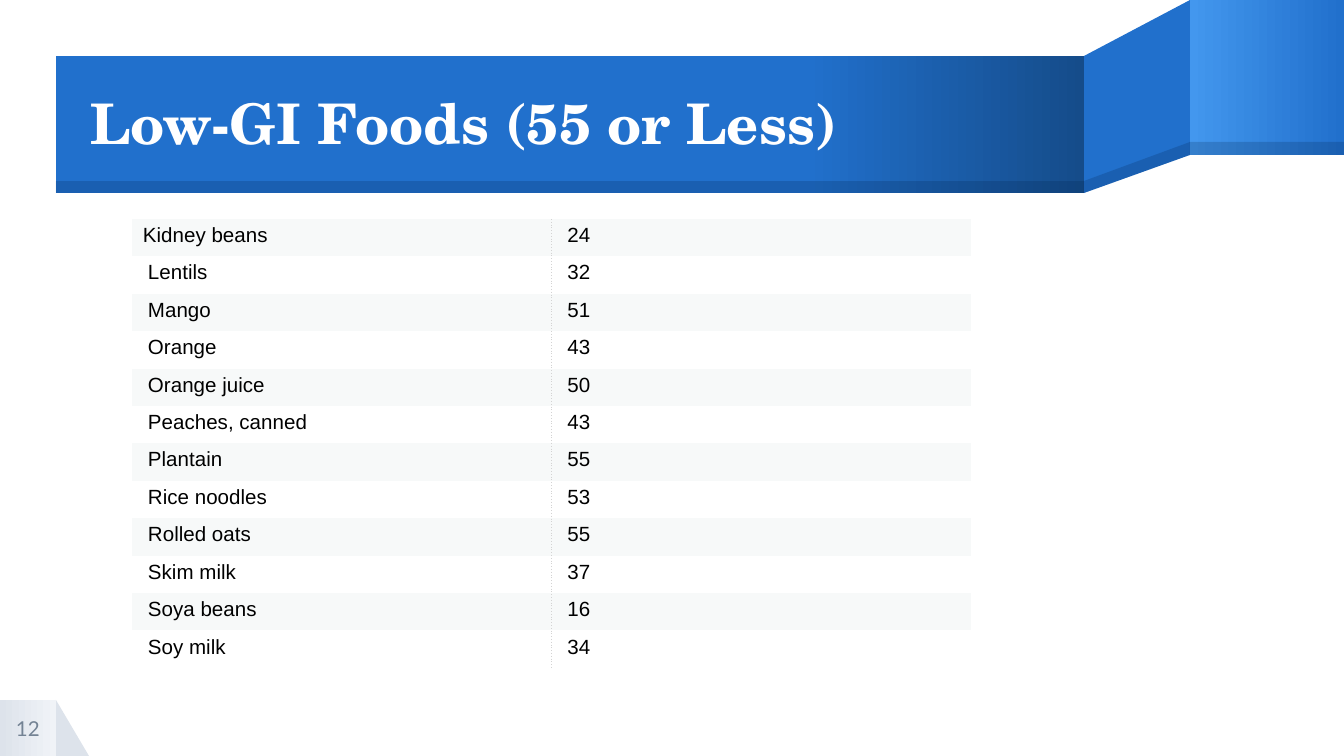
"""Build the slide that lists low-GI foods with their glycaemic index."""
from typing import NamedTuple

from lxml.etree import SubElement
from pptx import Presentation
from pptx.dml.color import RGBColor
from pptx.enum.shapes import MSO_SHAPE
from pptx.enum.text import MSO_ANCHOR, PP_ALIGN
from pptx.oxml.ns import qn
from pptx.util import Pt

EMU_PER_PX = 914400 / 134.4
RECTANGLE = MSO_SHAPE.RECTANGLE
RIGHT_TRIANGLE = MSO_SHAPE.RIGHT_TRIANGLE
MIDDLE = MSO_ANCHOR.MIDDLE
LEFT = PP_ALIGN.LEFT
CENTER = PP_ALIGN.CENTER

WHITE = RGBColor(0xFF, 0xFF, 0xFF)
BLACK = RGBColor(0, 0, 0)
BLUE = RGBColor(0x21, 0x70, 0xCC)
LIGHT_BLUE = RGBColor(0x43, 0x97, 0xEE)
DARK_BLUE = RGBColor(0x15, 0x4C, 0x8A)
SHADE = RGBColor(0x00, 0x1F, 0x46)
GREY = RGBColor(0xDD, 0xE3, 0xEB)
PALE_GREY = RGBColor(0xF0, 0xF3, 0xF7)
NUMBER_GREY = RGBColor(0x74, 0x83, 0x94)
STRIPE = RGBColor(0xF7, 0xF9, 0xF9)
BORDER = RGBColor(0xD3, 0xD3, 0xD3)

NO_TABLE_STYLE = "{2D5ABB26-0587-4C30-8999-92F81FD0307C}"
TEXT_MARGIN, INDENTED_MARGIN, VERTICAL_MARGIN = 11, 16, 5


class Box(NamedTuple):
    left: int
    top: int
    width: int
    height: int


class Stop(NamedTuple):
    percent: int
    color: RGBColor


class Paint(NamedTuple):
    stops: tuple[Stop, ...]
    opacity: int = 100


class Block(NamedTuple):
    box: Box
    paint: Paint
    preset: MSO_SHAPE = RECTANGLE


class Outline(NamedTuple):
    points: tuple[tuple[int, int], ...]
    paint: Paint


class Food(NamedTuple):
    name: str
    index: int


SOLID_BLUE = Paint((Stop(0, BLUE),))
TRANSLUCENT = Paint((Stop(0, SHADE),), 20)
NUMBER_BOX = Box(0, 700, 56, 56)
RIBBON = (
    Block(Box(56, 700, 33, 56), Paint((Stop(0, GREY),)), RIGHT_TRIANGLE),
    Block(NUMBER_BOX, Paint((Stop(0, GREY), Stop(100, PALE_GREY)))),
    Outline(((1190, 0), (1084, 56), (1084, 193), (1190, 155)), SOLID_BLUE),
    Block(Box(1190, 0, 154, 155), Paint((Stop(0, LIGHT_BLUE), Stop(100, BLUE)))),
    Block(Box(56, 56, 1028, 137),
          Paint((Stop(0, BLUE), Stop(73, BLUE), Stop(100, DARK_BLUE)))),
    Outline(((1190, 142), (1084, 181), (1084, 193), (1190, 155)), TRANSLUCENT),
    Block(Box(1190, 142, 154, 13), TRANSLUCENT),
    Block(Box(56, 181, 1028, 12), TRANSLUCENT),
)
FOODS = (
    Food("Kidney beans", 24),
    Food("Lentils", 32),
    Food("Mango", 51),
    Food("Orange", 43),
    Food("Orange juice", 50),
    Food("Peaches, canned", 43),
    Food("Plantain", 55),
    Food("Rice noodles", 53),
    Food("Rolled oats", 55),
    Food("Skim milk", 37),
    Food("Soya beans", 16),
    Food("Soy milk", 34),
)


def px(length: int) -> int:
    return round(length * EMU_PER_PX)


def place(box: Box) -> tuple[int, ...]:
    return tuple(px(length) for length in box)


def apply_paint(shape, paint: Paint) -> None:
    shape.shadow.inherit = False
    shape.line.fill.background()
    if len(paint.stops) == 1:
        shape.fill.solid()
        shape.fill.fore_color.rgb = paint.stops[0].color
        if paint.opacity < 100:
            color = shape.element.spPr.find(f"{qn('a:solidFill')}/{qn('a:srgbClr')}")
            SubElement(color, qn("a:alpha"), val=str(paint.opacity * 1000))
        return
    shape.fill.gradient()
    shape.fill.gradient_angle = 0
    stop_list = shape.element.spPr.find(f"{qn('a:gradFill')}/{qn('a:gsLst')}")
    for old_stop in list(stop_list):
        stop_list.remove(old_stop)
    for stop in paint.stops:
        element = SubElement(stop_list, qn("a:gs"), pos=str(stop.percent * 1000))
        SubElement(element, qn("a:srgbClr"), val=str(stop.color))


def draw_part(slide, part: Block | Outline) -> None:
    if isinstance(part, Block):
        shape = slide.shapes.add_shape(part.preset, *place(part.box))
    else:
        builder = slide.shapes.build_freeform(*part.points[0], scale=EMU_PER_PX)
        builder.add_line_segments(part.points[1:], close=True)
        shape = builder.convert_to_shape()
    apply_paint(shape, part.paint)


def write_text(frame, text: str, font_name: str, size: int, color: RGBColor,
               alignment: PP_ALIGN = LEFT, bold: bool = False) -> None:
    frame.text = text
    paragraph = frame.paragraphs[0]
    paragraph.alignment = alignment
    font = paragraph.font
    font.name, font.size, font.bold = font_name, Pt(size), bold
    font.color.rgb = color


def format_frame(shape) -> None:
    frame = shape.text_frame
    frame.word_wrap = True
    frame.vertical_anchor = MIDDLE
    frame.margin_left = frame.margin_top = frame.margin_right = frame.margin_bottom = 0


def draw_title(slide) -> None:
    title = slide.shapes.title
    title.element.getparent().append(title.element)
    title.left, title.top, title.width, title.height = place(Box(90, 58, 993, 136))
    format_frame(title)
    write_text(title.text_frame, "Low-GI Foods (55 or Less)", "TeX Gyre Schola", 30,
               WHITE, bold=True)
    title.text_frame.paragraphs[0].line_spacing = 0.9


def draw_number(slide) -> None:
    text_box = slide.shapes.add_textbox(*place(NUMBER_BOX))
    format_frame(text_box)
    write_text(text_box.text_frame, "12", "Lato", 11, NUMBER_GREY, CENTER)


def add_dotted_border(cell, side: str) -> None:
    properties = cell._tc.get_or_add_tcPr()
    line = SubElement(properties, qn(f"a:{side}"), w=str(Pt(0.5)))
    properties.insert(0, line)
    SubElement(SubElement(line, qn("a:solidFill")), qn("a:srgbClr"), val=str(BORDER))
    SubElement(line, qn("a:prstDash"), val="sysDot")


def draw_table(slide, foods: tuple[Food, ...]) -> None:
    frame = slide.shapes.add_table(len(foods), 2, *place(Box(132, 219, 839, 449)))
    frame.element.find(f".//{qn('a:tableStyleId')}").text = NO_TABLE_STYLE
    table = frame.table
    table.first_row = table.horz_banding = False
    for row, food in enumerate(foods):
        for column, text in enumerate((food.name, str(food.index))):
            cell = table.cell(row, column)
            cell.fill.solid()
            cell.fill.fore_color.rgb = WHITE if row % 2 else STRIPE
            first = row == column == 0
            cell.margin_left = px(TEXT_MARGIN if first else INDENTED_MARGIN)
            cell.margin_right = px(TEXT_MARGIN)
            cell.margin_top = cell.margin_bottom = px(VERTICAL_MARGIN)
            write_text(cell.text_frame, text, "Arial", 11, BLACK)
            add_dotted_border(cell, "lnL" if column else "lnR")


def main() -> None:
    presentation = Presentation()
    presentation.slide_width, presentation.slide_height = px(1344), px(756)
    slide = presentation.slides.add_slide(presentation.slide_layouts[5])
    for part in RIBBON:
        draw_part(slide, part)
    draw_title(slide)
    draw_number(slide)
    draw_table(slide, FOODS)
    presentation.save("out.pptx")


if __name__ == "__main__":
    main()
